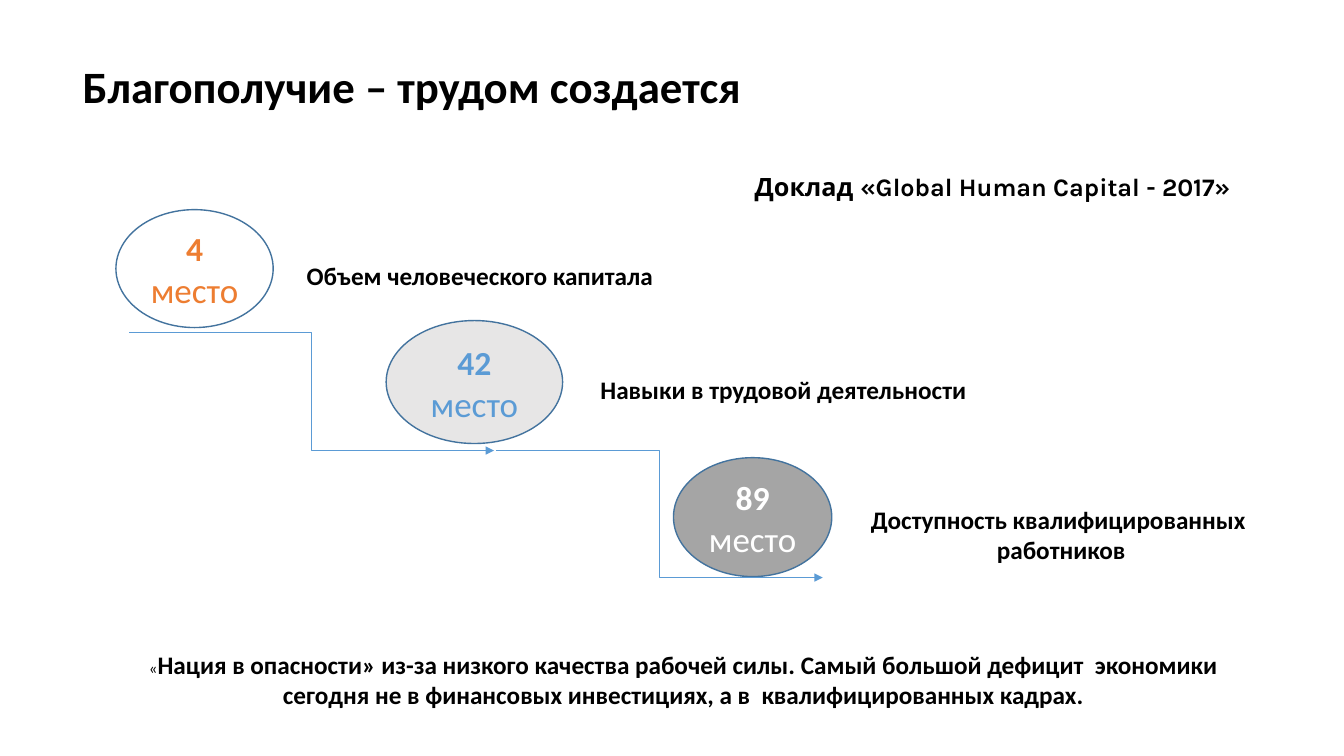
from lxml import etree
from pptx import Presentation
from pptx.dml.color import RGBColor
from pptx.enum.shapes import MSO_CONNECTOR, MSO_SHAPE
from pptx.enum.text import MSO_ANCHOR, MSO_AUTO_SIZE, PP_ALIGN
from pptx.oxml.ns import qn
from pptx.util import Inches, Pt

ELBOW = MSO_CONNECTOR.ELBOW
OVAL = MSO_SHAPE.OVAL
RECTANGLE = MSO_SHAPE.RECTANGLE
MIDDLE, TOP = MSO_ANCHOR.MIDDLE, MSO_ANCHOR.TOP
CENTER, LEFT = PP_ALIGN.CENTER, PP_ALIGN.LEFT
FIT_SHAPE = MSO_AUTO_SIZE.SHAPE_TO_FIT_TEXT
BLACK, WHITE = "000000", "FFFFFF"


def color(value):
    return RGBColor.from_string(value)


def add_span(para, text, size, value=BLACK, bold=True, face="Calibri"):
    span = para.add_run()
    span.text = text
    span.font.name = face
    span.font.size = Pt(size)
    span.font.bold = bold
    span.font.color.rgb = color(value)


deck = Presentation()
deck.slide_width, deck.slide_height = Inches(13.33), Inches(7.5)
page = deck.slides.add_slide(deck.slide_layouts[6])

# Title
title = page.shapes.add_shape(
    RECTANGLE, Inches(0.75), Inches(0.51), Inches(8.34), Inches(0.68))
title.shadow.inherit = False
title.fill.solid()
title.fill.fore_color.rgb = color(WHITE)
title.line.fill.background()
frame = title.text_frame
frame.word_wrap = True
frame.auto_size = FIT_SHAPE
frame.vertical_anchor = TOP
frame.margin_left = frame.margin_right = Inches(0.07)
frame.margin_top = frame.margin_bottom = Inches(0.07)
frame.paragraphs[0].alignment = LEFT
add_span(frame.paragraphs[0], "Благополучие – трудом создается", 32)

# Ranking ovals
rankings = [
    ("4", 1.15, 2.08, 1.56, 1.17, WHITE, "ED7D31"),
    ("42", 3.83, 3.18, 1.75, 1.22, "E7E6E6", "5B9BD5"),
    ("89", 6.68, 4.54, 1.57, 1.18, "A5A5A5", WHITE),
]
for rank, left, top, width, height, fill, ink in rankings:
    oval = page.shapes.add_shape(
        OVAL, Inches(left), Inches(top), Inches(width), Inches(height))
    oval.shadow.inherit = False
    oval.fill.solid()
    oval.fill.fore_color.rgb = color(fill)
    oval.line.color.rgb = color("43739E")
    oval.line.width = Pt(1)
    oval.text_frame.word_wrap = True
    oval.text_frame.vertical_anchor = MIDDLE
    para = oval.text_frame.paragraphs[0]
    para.alignment = CENTER
    add_span(para, rank, 24, ink)
    add_span(para, " место", 25, ink, bold=False)

# Indicator labels and report name
labels = [
    (2.93, 2.53, 3.66, 0.4, "Calibri", ["Объем человеческого капитала"]),
    (5.84, 3.66, 3.86, 0.4, "Calibri", ["Навыки в трудовой деятельности"]),
    (8.52, 4.95, 4.01, 0.71, "Calibri",
     ["Доступность квалифицированных ", "работников"]),
    (7.22, 1.65, 5.25, 0.4, "Karla", ["Доклад «Global Human Capital - 2017»"]),
]
for left, top, width, height, face, lines in labels:
    box = page.shapes.add_textbox(
        Inches(left), Inches(top), Inches(width), Inches(height))
    frame = box.text_frame
    frame.word_wrap = False
    frame.auto_size = FIT_SHAPE
    for index, line in enumerate(lines):
        para = frame.add_paragraph() if index else frame.paragraphs[0]
        para.alignment = CENTER
        add_span(para, line, 18, face=face)

# Conclusion
conclusion = page.shapes.add_textbox(
    Inches(1.03), Inches(6.39), Inches(11.5), Inches(0.71))
conclusion.text_frame.word_wrap = True
conclusion.text_frame.auto_size = FIT_SHAPE
para = conclusion.text_frame.paragraphs[0]
para.alignment = CENTER
add_span(para, "«", 12, bold=False)
add_span(para, "Нация в опасности» из-за низкого качества рабочей силы. "
               "Самый большой дефицит  экономики сегодня не в финансовых "
               "инвестициях, а в  квалифицированных кадрах.", 18)

# Descending steps
for x1, y1, x2, y2 in [(1.28, 3.3, 4.9, 4.47), (4.92, 4.47, 8.16, 5.73)]:
    step = page.shapes.add_connector(
        ELBOW, Inches(x1), Inches(y1), Inches(x2), Inches(y2))
    step.line.color.rgb = color("5B9BD5")
    step.line.width = Pt(0.5)
    properties = step.element.spPr
    outline = properties.find(qn("a:ln"))
    etree.SubElement(outline, qn("a:tailEnd"), type="triangle")
    etree.SubElement(properties, qn("a:effectLst"))

deck.save("out.pptx")
